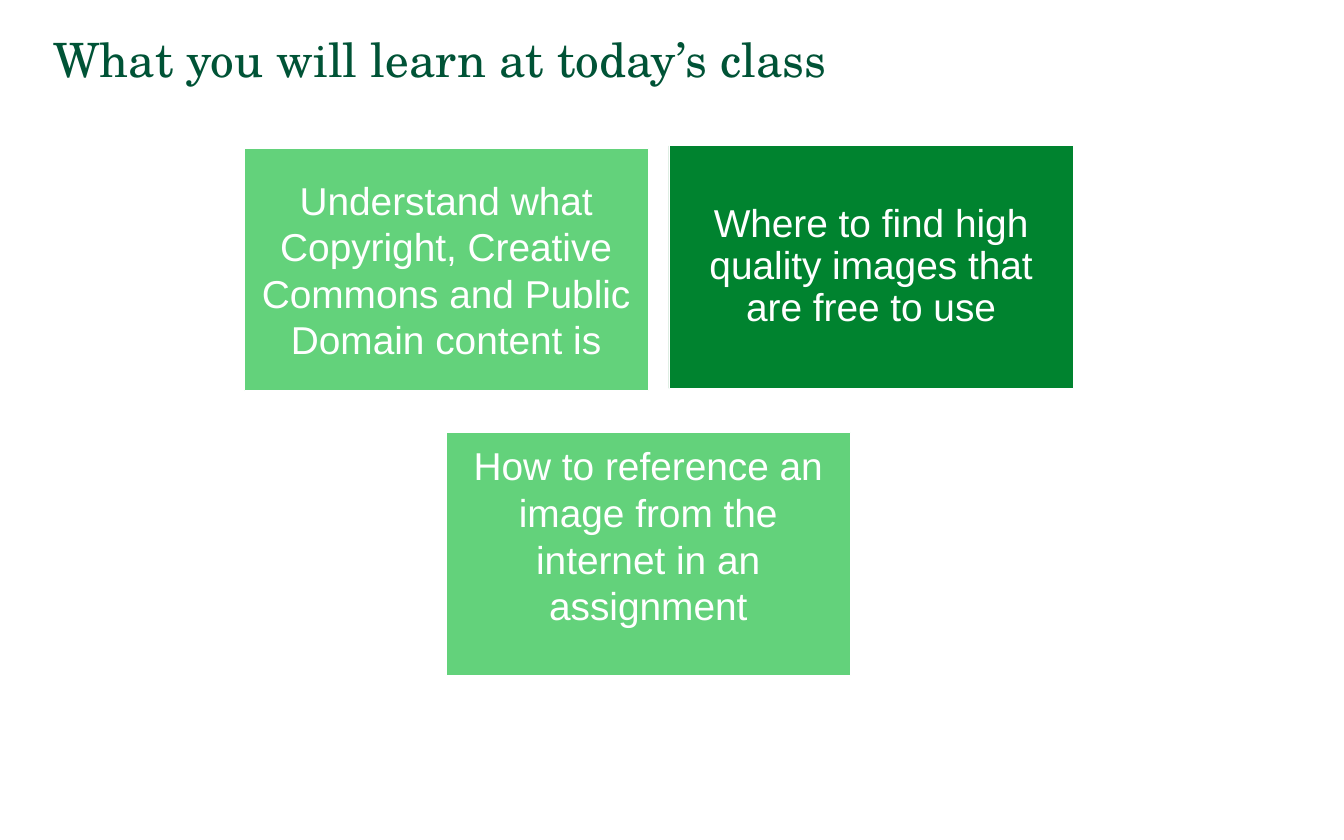
from dataclasses import dataclass

import pptx
import pptx.dml.color
import pptx.enum.shapes
import pptx.enum.text
import pptx.slide
import pptx.text.text
import pptx.util

Cm = pptx.util.Cm
Pt = pptx.util.Pt
RGBColor = pptx.dml.color.RGBColor
Align = pptx.enum.text.PP_ALIGN
Anchor = pptx.enum.text.MSO_ANCHOR

PINE = RGBColor(0x00, 0x53, 0x36)
GREEN = RGBColor(0x00, 0x83, 0x2F)
MINT = RGBColor(0x63, 0xD2, 0x7B)
WHITE = RGBColor(0xFF, 0xFF, 0xFF)

WIDTH, HEIGHT = Cm(13.59), Cm(8.15)
INSET = 0.38


@dataclass
class Card:
    left: float
    top: float
    fill: RGBColor
    text: str
    leading: float = 1.0
    bottom: float = INSET


CARDS = [
    Card(22.48, 4.9, GREEN,
         "Where to find high quality images that are free to use", leading=0.9),
    Card(8.2, 4.98, MINT,
         "Understand what Copyright, Creative Commons and Public Domain content is"),
    Card(14.99, 14.53, MINT,
         "How to reference an image from the internet in an assignment", bottom=1.62),
]


def write(frame: pptx.text.text.TextFrame, text: str, face: str, size: int,
          color: RGBColor, align: Align, leading: float) -> None:
    frame.word_wrap = True
    line = frame.paragraphs[0]
    line.text = text
    line.alignment = align
    line.line_spacing = leading
    line.font.name = face
    line.font.size = Pt(size)
    line.font.color.rgb = color


def add_title(slide: pptx.slide.Slide, text: str) -> None:
    box = slide.shapes.add_textbox(Cm(1.55), Cm(1.12), Cm(38.94), Cm(2.9))
    write(box.text_frame, text, "TeX Gyre Schola", 45, PINE, Align.LEFT, 0.9)


def add_card(slide: pptx.slide.Slide, card: Card) -> None:
    shape = slide.shapes.add_shape(
        pptx.enum.shapes.MSO_SHAPE.RECTANGLE,
        Cm(card.left), Cm(card.top), WIDTH, HEIGHT)
    shape.shadow.inherit = False
    shape.fill.solid()
    shape.fill.fore_color.rgb = card.fill
    shape.line.color.rgb = WHITE
    shape.line.width = Pt(0.85)
    frame = shape.text_frame
    frame.vertical_anchor = Anchor.MIDDLE
    frame.margin_left = frame.margin_right = frame.margin_top = Cm(INSET)
    frame.margin_bottom = Cm(card.bottom)
    write(frame, card.text, "Arial", 37, WHITE, Align.CENTER, card.leading)


def main() -> None:
    deck = pptx.Presentation()
    deck.slide_width, deck.slide_height = Cm(45.16), Cm(28.22)
    slide = deck.slides.add_slide(deck.slide_layouts[6])
    add_title(slide, "What you will learn at today’s class")
    for card in CARDS:
        add_card(slide, card)
    deck.save("out.pptx")


if __name__ == "__main__":
    main()
